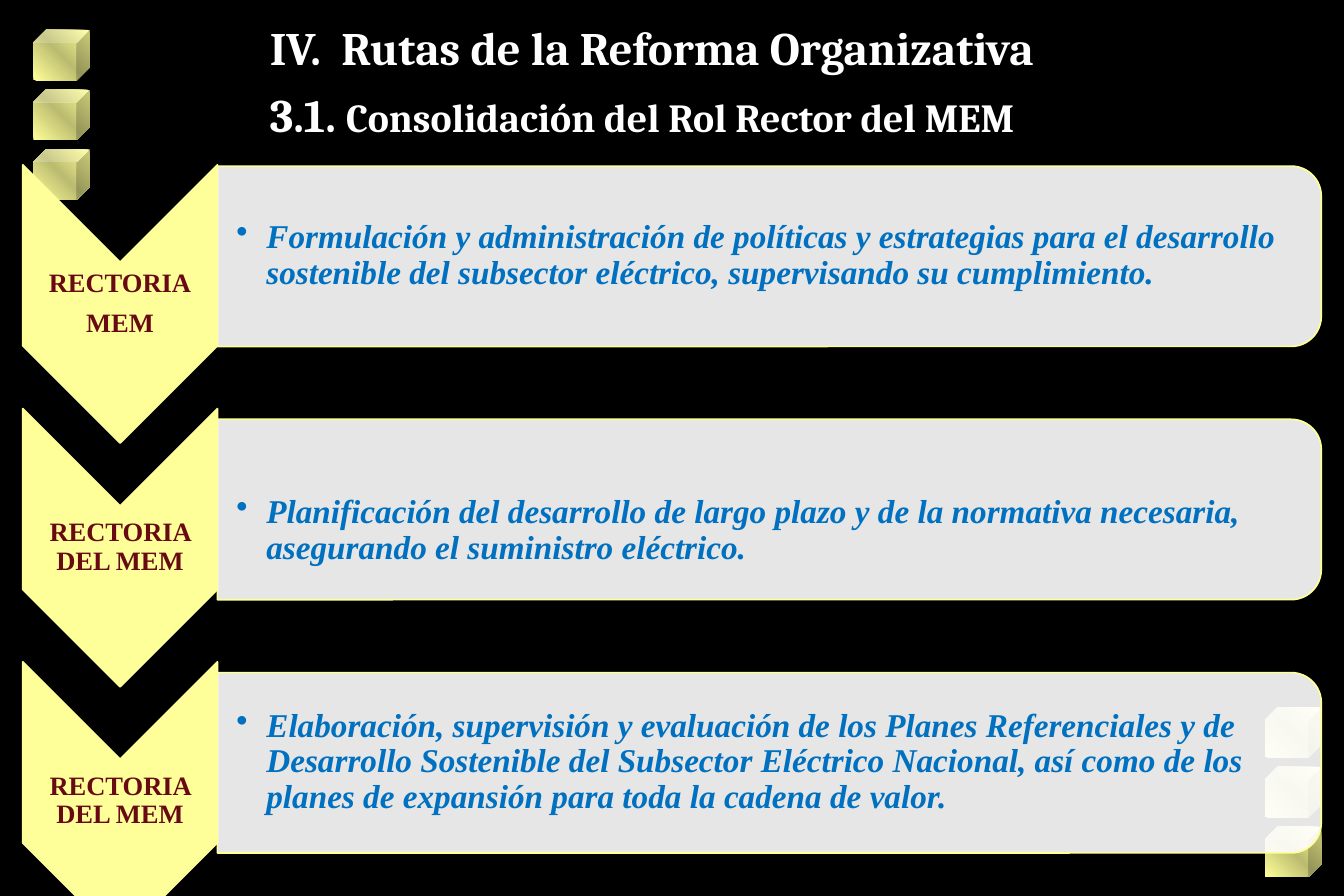
"""Build the slide on the steering role of the ministry in the organisational reform."""
from copy import deepcopy

from lxml.etree import SubElement
from pptx import Presentation
from pptx.dml.color import RGBColor
from pptx.enum.shapes import MSO_SHAPE
from pptx.enum.text import MSO_ANCHOR, PP_ALIGN
from pptx.oxml.ns import qn
from pptx.util import Inches, Pt

TITLE = [
    [("IV.  Rutas de la Reforma Organizativa", 28)],
    [("3.1. ", 28), ("Consolidación del Rol Rector del MEM", 24)],
]
ROWS = [
    {"label": ["RECTORIA", "MEM"], "chevron_top": 1.38, "inset_top": 0.01,
     "text": "Formulación y administración de políticas y estrategias para el "
             "desarrollo sostenible del subsector eléctrico, supervisando su cumplimiento."},
    {"label": ["RECTORIA DEL MEM"], "chevron_top": 3.42, "inset_top": 0.37,
     "text": "Planificación del desarrollo de largo plazo y de la normativa "
             "necesaria, asegurando el suministro eléctrico."},
    {"label": ["RECTORIA DEL MEM"], "chevron_top": 5.54, "inset_top": 0.01,
     "text": "Elaboración, supervisión y evaluación de los Planes Referenciales y de "
             "Desarrollo Sostenible del Subsector Eléctrico Nacional, así como de los "
             "planes de expansión para toda la cadena de valor."},
]
CUBE_STACKS = [(0.28, 0.25), (10.59, 5.92)]
CUBE_STEP = 0.5
CUBE_GRADIENT = [(0, "FFFF99"), (0.5, "BCBC71"), (1, "FFFF99")]
YELLOW, WHITE, MAROON, BLUE, BLACK = "FFFF99", "FFFFFF", "680A13", "0070C0", "000000"
SERIF = "Times New Roman"
CHEVRON_LEFT, CHEVRON_WIDTH, CHEVRON_HEIGHT = 0.19, 1.63, 2.33
PANEL_LEFT, PANEL_TOP, PANEL_STEP = 1.82, 1.39, 2.12
PANEL_WIDTH, PANEL_HEIGHT = 9.24, 1.51


def color(value):
    return RGBColor.from_string(value)


def style_font(font, name, size, value, italic=None):
    font.name, font.size, font.bold, font.italic = name, Pt(size), True, italic
    font.color.rgb = color(value)


def add_cube(page, left, top):
    cube = page.shapes.add_shape(
        MSO_SHAPE.CUBE, Inches(left), Inches(top), Inches(0.47), Inches(0.42))
    cube.shadow.inherit = False
    cube.line.fill.background()
    cube.fill.gradient()
    cube.fill.gradient_angle = 45
    stop_list = cube._element.spPr.find(qn("a:gradFill")).find(qn("a:gsLst"))
    stop_list.append(deepcopy(stop_list[0]))
    for stop, (position, value) in zip(cube.fill.gradient_stops, CUBE_GRADIENT):
        stop.position = position
        stop.color.rgb = color(value)


def add_turned(page, kind, left, top, width, height, fill):
    """Add a shape turned by 90 degrees that covers the given visible area."""
    shape = page.shapes.add_shape(
        kind, Inches(left + (width - height) / 2), Inches(top + (height - width) / 2),
        Inches(height), Inches(width))
    shape.rotation = 90
    shape.shadow.inherit = False
    shape.fill.solid()
    shape.fill.fore_color.rgb = color(fill)
    shape.line.color.rgb = color(YELLOW)
    shape.line.width = Pt(1)
    return shape


def add_text_frame(page, left, top, width, height, inset_left=0.01, inset_top=0.01):
    box = page.shapes.add_textbox(Inches(left), Inches(top), Inches(width), Inches(height))
    frame = box.text_frame
    frame.word_wrap = True
    frame.vertical_anchor = MSO_ANCHOR.MIDDLE
    frame.margin_left, frame.margin_top = Inches(inset_left), Inches(inset_top)
    frame.margin_right = frame.margin_bottom = Inches(0.01)
    return frame


def add_row(page, row, panel_top):
    chevron_top = row["chevron_top"]
    add_turned(page, MSO_SHAPE.CHEVRON, CHEVRON_LEFT, chevron_top,
               CHEVRON_WIDTH, CHEVRON_HEIGHT, YELLOW)
    frame = add_text_frame(page, CHEVRON_LEFT, chevron_top + CHEVRON_WIDTH / 2,
                           CHEVRON_WIDTH, 0.7)
    frame.text = "\n".join(row["label"])
    for para in frame.paragraphs:
        para.alignment = PP_ALIGN.CENTER
        para.line_spacing = 0.9
        para.space_after = Pt(6.4)
        style_font(para.font, SERIF, 16, MAROON)

    panel = add_turned(page, MSO_SHAPE.ROUND_2_SAME_RECTANGLE, PANEL_LEFT, panel_top,
                       PANEL_WIDTH, PANEL_HEIGHT, WHITE)
    fill_color = panel._element.spPr.find(qn("a:solidFill"))[0]
    SubElement(fill_color, qn("a:alpha"), val="90000")
    frame = add_text_frame(page, PANEL_LEFT, panel_top + 0.07, 9.17, 1.36,
                           0.16, row["inset_top"])
    para = frame.paragraphs[0]
    para.text = row["text"]
    para.line_spacing = 0.9
    style_font(para.font, SERIF, 20, BLUE, True)
    properties = para._p.get_or_add_pPr()
    properties.set("marL", str(Inches(0.25)))
    properties.set("indent", str(Inches(-0.25)))
    bullet = SubElement(properties, qn("a:buChar"), char="•")
    properties.find(qn("a:defRPr")).addprevious(bullet)


def add_title(page):
    box = page.shapes.add_textbox(Inches(2.16), Inches(0.11), Inches(7.95), Inches(1.14))
    frame = box.text_frame
    frame.word_wrap = False
    for index, spans in enumerate(TITLE):
        para = frame.add_paragraph() if index else frame.paragraphs[0]
        para.space_before = Pt(7)
        for text, size in spans:
            span = para.add_run()
            span.text = text
            style_font(span.font, "Cambria", size, WHITE)


def main():
    deck = Presentation()
    deck.slide_width, deck.slide_height = Inches(11.25), Inches(7.5)
    page = deck.slides.add_slide(deck.slide_layouts[6])
    page.background.fill.solid()
    page.background.fill.fore_color.rgb = color(BLACK)
    for left, top in CUBE_STACKS:
        for index in range(3):
            add_cube(page, left, top + index * CUBE_STEP)
    for index, row in enumerate(ROWS):
        add_row(page, row, PANEL_TOP + index * PANEL_STEP)
    add_title(page)
    deck.save("out.pptx")


if __name__ == "__main__":
    main()
